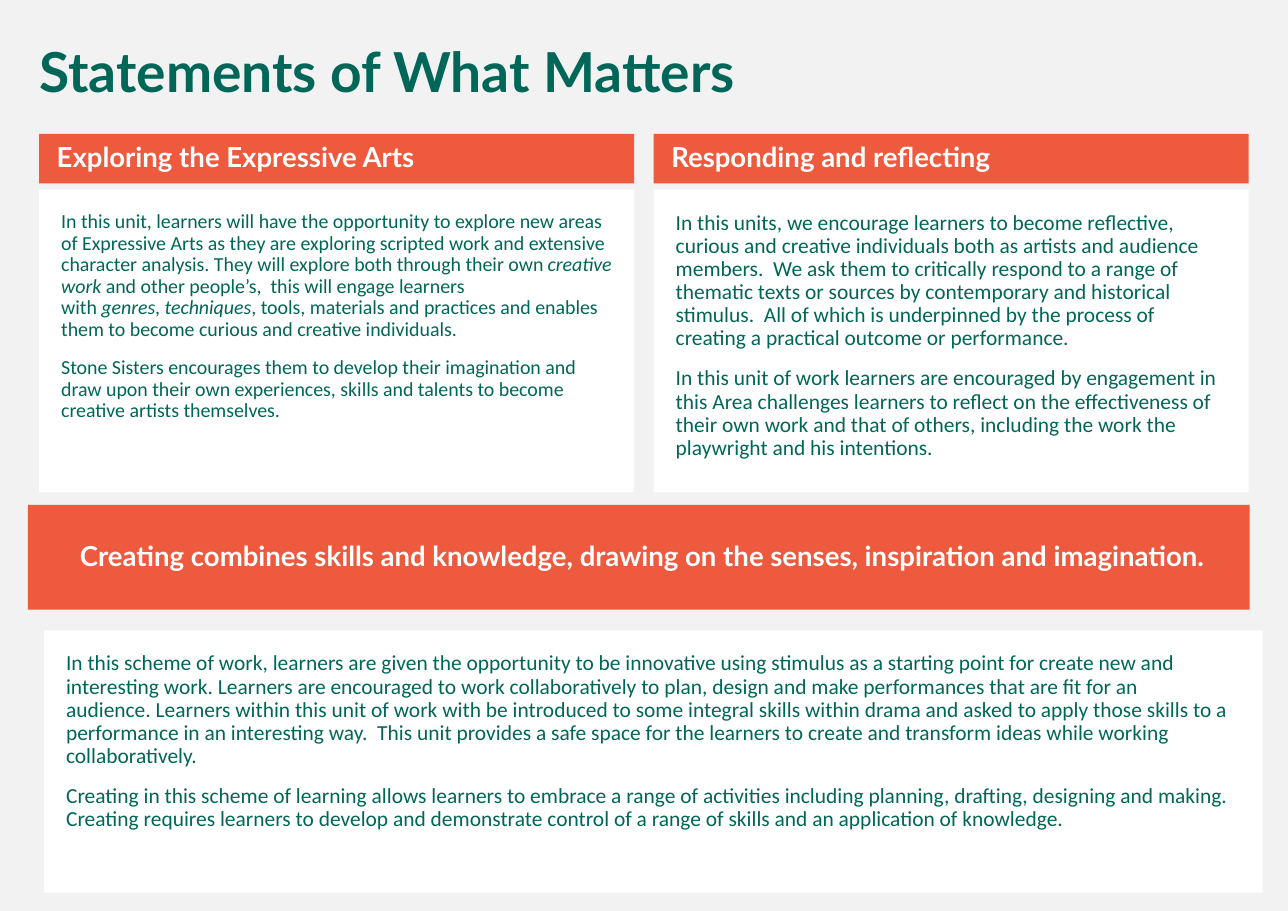
"""Builds the Statements of What Matters slide: a title, three banners and three text panels."""
from pptx import Presentation
from pptx.dml.color import RGBColor
from pptx.enum.shapes import MSO_SHAPE
from pptx.enum.text import MSO_ANCHOR, PP_ALIGN
from pptx.util import Pt

RECTANGLE = MSO_SHAPE.RECTANGLE
TOP, MIDDLE = MSO_ANCHOR.TOP, MSO_ANCHOR.MIDDLE
LEFT, CENTER = PP_ALIGN.LEFT, PP_ALIGN.CENTER
GREEN, ORANGE, WHITE, GREY = "006758", "ED5A3E", "FFFFFF", "F2F2F2"
NO_BREAK_SPACE = chr(160)
PANEL_INSETS = (14.4, 14.4, 14.4, 14.4)
BANNER_INSETS = (11.5, 3.6, 7.2, 3.6)
TITLE_INSETS = (7.2, 3.6, 7.2, 3.6)
COLUMN_LEFTS = (25.6, 427.2)
COLUMN_WIDTH = 388.8


def color(value):
    return RGBColor.from_string(value)


def write(shape, paragraphs, font, size, text_color, insets, anchor=TOP, align=LEFT, bold=False):
    text_frame = shape.text_frame
    text_frame.word_wrap = True
    text_frame.vertical_anchor = anchor
    (text_frame.margin_left, text_frame.margin_top,
     text_frame.margin_right, text_frame.margin_bottom) = map(Pt, insets)
    text_frame.text = "\n".join(paragraphs).replace("~", NO_BREAK_SPACE)
    for paragraph in text_frame.paragraphs:
        paragraph.alignment = align
        paragraph.line_spacing = 0.9
        paragraph.space_before = Pt(11)
        pieces = paragraph.text.split("*")
        paragraph.text = pieces[0]
        for piece in pieces[1:]:
            paragraph.add_run().text = piece
        for index, run in enumerate(paragraph.runs):
            run.font.name = font
            run.font.size = Pt(size)
            run.font.bold = bold
            run.font.italic = index % 2 == 1
            run.font.color.rgb = color(text_color)


exploring = [
    "In this unit, learners will have the opportunity to explore new areas of Expressive Arts as they "
    "are exploring scripted work and extensive character analysis. They will explore both through "
    "their own~*creative work*~and other people’s,~ this will engage learners "
    "with~*genres*,~*techniques*, tools, materials and practices and enables them to become "
    "curious and creative individuals.",
    "Stone Sisters encourages them to develop their imagination and draw upon their own experiences, "
    "skills and talents to become creative artists themselves.",
]
responding = [
    "In this units, we encourage learners to become reflective, curious and creative individuals both "
    "as artists and audience members.~~We ask them to critically respond to a range of thematic "
    "texts or sources by contemporary and historical stimulus.~ All of which is underpinned by the "
    "process of creating a practical outcome or performance.",
    "In this unit of work~learners~are encouraged by engagement in this Area challenges learners to "
    "reflect on the effectiveness of their own work and that of others, including the work~the "
    "playwright and his intentions.",
]
creating = [
    "In this scheme of work, learners are~given the opportunity to be~innovative~using stimulus~as a "
    "starting point for create new and interesting work.~Learners are encouraged to work "
    "collaboratively~to plan,~design and make performances that are fit for an audience.~Learners "
    "within this unit of work with~be introduced to~some integral~skills within~drama and~asked to "
    "apply those skills~to~a performance in~an interesting way.~ This unit provides a safe space for "
    "the learners to~create and transform ideas~while~working collaboratively.",
    "Creating in this~scheme of learning allows learners to~embrace a range of activities including "
    "planning, drafting, designing and making. Creating requires learners to develop and demonstrate "
    "control of a range of skills and an application of knowledge.",
]
panels = [
    (COLUMN_LEFTS[0], 123.9, COLUMN_WIDTH, 198, 13, exploring),
    (COLUMN_LEFTS[1], 123.9, COLUMN_WIDTH, 198, 14, responding),
    (28.8, 412, 796.3, 171.4, 14, creating),
]
banners = [
    (COLUMN_LEFTS[0], 87.5, COLUMN_WIDTH, 32.4, LEFT, "Exploring the Expressive Arts"),
    (COLUMN_LEFTS[1], 87.5, COLUMN_WIDTH, 32.4, LEFT, "Responding and reflecting"),
    (18.2, 330, 798.5, 68.4, CENTER,
     "Creating combines skills and knowledge, drawing on the senses, inspiration and imagination."),
]

presentation = Presentation()
presentation.slide_width = Pt(841.7)
presentation.slide_height = Pt(595.4)
slide = presentation.slides.add_slide(presentation.slide_layouts[6])
slide.background.fill.solid()
slide.background.fill.fore_color.rgb = color(GREY)

title = slide.shapes.add_textbox(Pt(18.7), Pt(25.9), Pt(797.8), Pt(46.8))
write(title, ["Statements of What Matters"], "Lato", 36, GREEN, TITLE_INSETS, bold=True)

for left, top, width, height, size, paragraphs in panels:
    panel = slide.shapes.add_shape(RECTANGLE, Pt(left), Pt(top), Pt(width), Pt(height))
    panel.shadow.inherit = False
    panel.fill.solid()
    panel.fill.fore_color.rgb = color(WHITE)
    panel.line.fill.background()
    write(panel, paragraphs, "Calibri", size, GREEN, PANEL_INSETS)

for left, top, width, height, align, heading in banners:
    banner = slide.shapes.add_shape(RECTANGLE, Pt(left), Pt(top), Pt(width), Pt(height))
    banner.shadow.inherit = False
    banner.fill.solid()
    banner.fill.fore_color.rgb = color(ORANGE)
    banner.line.fill.background()
    write(banner, [heading], "Lato", 18, WHITE, BANNER_INSETS, MIDDLE, align, bold=True)

presentation.save("out.pptx")
